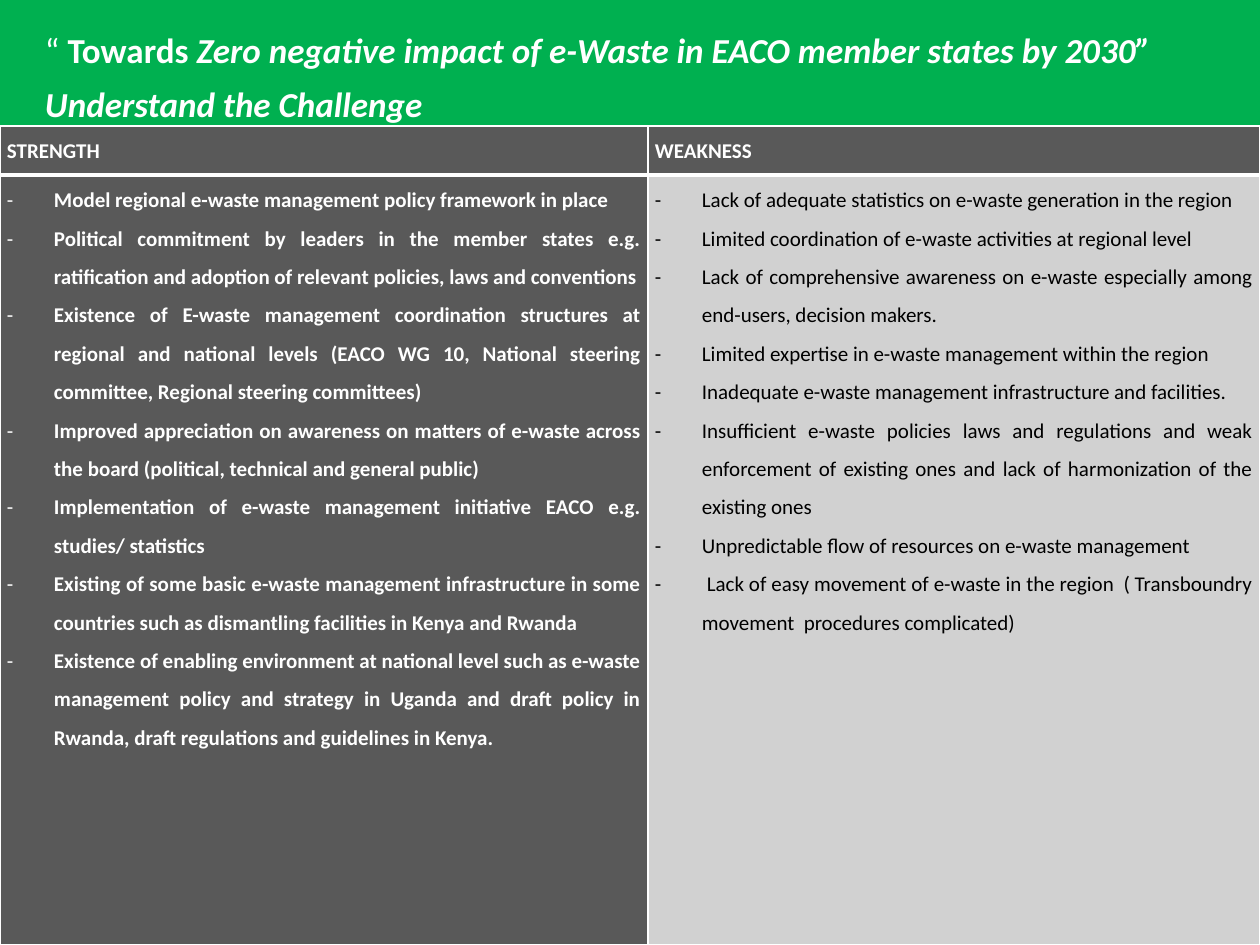
from lxml.etree import SubElement
from pptx import Presentation
from pptx.dml.color import RGBColor
from pptx.enum.shapes import MSO_SHAPE
from pptx.enum.text import MSO_ANCHOR, MSO_AUTO_SIZE, PP_ALIGN
from pptx.oxml.ns import qn
from pptx.util import Pt

TITLE = [
    [("“ ", {}),
     ("Towards ", {"bold": True}),
     ("Zero negative impact of e-Waste in EACO member states by 2030”",
      {"bold": True, "italic": True})],
    [("Understand the Challenge", {"bold": True, "italic": True})],
]
COLUMNS = [
    {"head": "STRENGTH", "width": 648, "fill": "dark", "text": "white", "bold": True, "points": [
        "Model regional e-waste management policy framework in place",
        "Political commitment by leaders in the member states e.g. ratification and adoption "
        "of relevant policies, laws and conventions",
        "Existence of E-waste management coordination structures at regional and national levels "
        "(EACO WG 10, National steering committee, Regional steering committees)",
        "Improved appreciation on awareness on matters of e-waste across the board "
        "(political, technical and general public)",
        "Implementation of e-waste management initiative EACO e.g. studies/ statistics",
        "Existing of some basic e-waste management infrastructure in some countries such as "
        "dismantling facilities in Kenya and Rwanda",
        "Existence of enabling environment at national level such as e-waste management policy "
        "and strategy in Uganda and draft policy in Rwanda, draft regulations and guidelines in Kenya.",
    ]},
    {"head": "WEAKNESS", "width": 612, "fill": "light", "text": "black", "bold": False, "points": [
        "Lack of adequate statistics on e-waste generation in the region",
        "Limited coordination of e-waste activities at regional level",
        "Lack of comprehensive awareness on e-waste especially among end-users, decision makers.",
        "Limited expertise in e-waste management within the region",
        "Inadequate e-waste management infrastructure and facilities.",
        "Insufficient e-waste policies laws and regulations and weak enforcement of existing ones "
        "and lack of harmonization of the existing ones",
        "Unpredictable flow of resources on e-waste management",
        " Lack of easy movement of e-waste in the region  ( Transboundry movement  "
        "procedures complicated)",
    ]},
]
THEME = {
    "font": "Calibri", "title": 20, "body": 12,
    "green": "00B050", "white": "FFFFFF", "black": "000000", "dark": "595959", "light": "D1D1D1",
}
WIDTH, HEIGHT, BAND, HEAD_ROW = 1260, 945, 126, 49
INDENT, CELL_INSET, TITLE_INSET = 47, 7, 13
THIN, THICK = 1, 3


def px(n):
    return round(n * 914400 / 126)


def rgb(name):
    return RGBColor.from_string(THEME[name])


def paint(fill, name):
    fill.solid()
    fill.fore_color.rgb = rgb(name)


def add_run(p, text, size, color, **formats):
    r = p.add_run()
    r.text = text
    r.font.color.rgb = rgb(color)
    for key, value in {"name": THEME["font"], "size": Pt(THEME[size]), **formats}.items():
        setattr(r.font, key, value)


def paragraphs(tf, count):
    """Yield the first paragraph of the frame, then new ones up to count."""
    for i in range(count):
        yield tf.add_paragraph() if i else tf.paragraphs[0]


def add_dash(p):
    """Hang the paragraph from a dash bullet."""
    pPr = p._p.get_or_add_pPr()
    pPr.set("marL", str(px(INDENT)))
    pPr.set("indent", str(-px(INDENT)))
    SubElement(pPr, qn("a:buFont"), typeface=THEME["font"])
    SubElement(pPr, qn("a:buChar"), char="-")


def add_borders(cell, top, bottom):
    tcPr = cell._tc.get_or_add_tcPr()
    for side, width in {"L": THIN, "R": THIN, "T": top, "B": bottom}.items():
        ln = SubElement(tcPr, qn(f"a:ln{side}"), w=str(Pt(width)))
        SubElement(SubElement(ln, qn("a:solidFill")), qn("a:srgbClr"), val=THEME["white"])


def fill_cell(cell, lines, fill, color, bold, borders, dashes=False):
    add_borders(cell, *borders)
    paint(cell.fill, fill)
    inset = px(CELL_INSET)
    for key, value in {"margin_left": inset, "margin_right": inset,
                       "margin_top": 0, "margin_bottom": 0}.items():
        setattr(cell, key, value)
    for p, line in zip(paragraphs(cell.text_frame, len(lines)), lines):
        p.alignment, p.line_spacing = PP_ALIGN.JUSTIFY, 1.5
        if dashes:
            add_dash(p)
        add_run(p, line, "body", color, bold=bold)


def place_title(s):
    title = s.shapes.title
    for key, value in {"left": 32, "top": 10, "width": 1155, "height": 115}.items():
        setattr(title, key, px(value))
    tf = title.text_frame
    inset = px(TITLE_INSET)
    for key, value in {"margin_left": inset, "margin_right": inset, "margin_top": 0,
                       "margin_bottom": 0, "vertical_anchor": MSO_ANCHOR.BOTTOM,
                       "word_wrap": True, "auto_size": MSO_AUTO_SIZE.NONE}.items():
        setattr(tf, key, value)
    for p, runs in zip(paragraphs(tf, len(TITLE)), TITLE):
        p.alignment, p.line_spacing = PP_ALIGN.LEFT, 1.3
        for text, formats in runs:
            add_run(p, text, "title", "white", **formats)


def add_band(s):
    """Add the green band behind the title."""
    band = s.shapes.add_shape(MSO_SHAPE.RECTANGLE, 0, 0, px(WIDTH), px(BAND))
    band.shadow.inherit = False
    paint(band.fill, "green")
    band.line.fill.background()
    s.shapes.title.element.addprevious(band.element)


def add_swot_table(s):
    table = s.shapes.add_table(2, len(COLUMNS), 0, px(BAND), px(WIDTH), px(HEIGHT - BAND)).table
    for row, height in zip(table.rows, (HEAD_ROW, HEIGHT - BAND - HEAD_ROW)):
        row.height = px(height)
    for i, col in enumerate(COLUMNS):
        table.columns[i].width = px(col["width"])
        fill_cell(table.cell(0, i), [col["head"]], "dark", "white", True, (THIN, THICK))
        fill_cell(table.cell(1, i), col["points"], col["fill"], col["text"], col["bold"],
                  (THICK, THIN), dashes=True)


def main():
    prs = Presentation()
    prs.slide_width, prs.slide_height = px(WIDTH), px(HEIGHT)
    s = prs.slides.add_slide(prs.slide_layouts[5])
    place_title(s)
    add_band(s)
    add_swot_table(s)
    prs.save("out.pptx")


if __name__ == "__main__":
    main()
